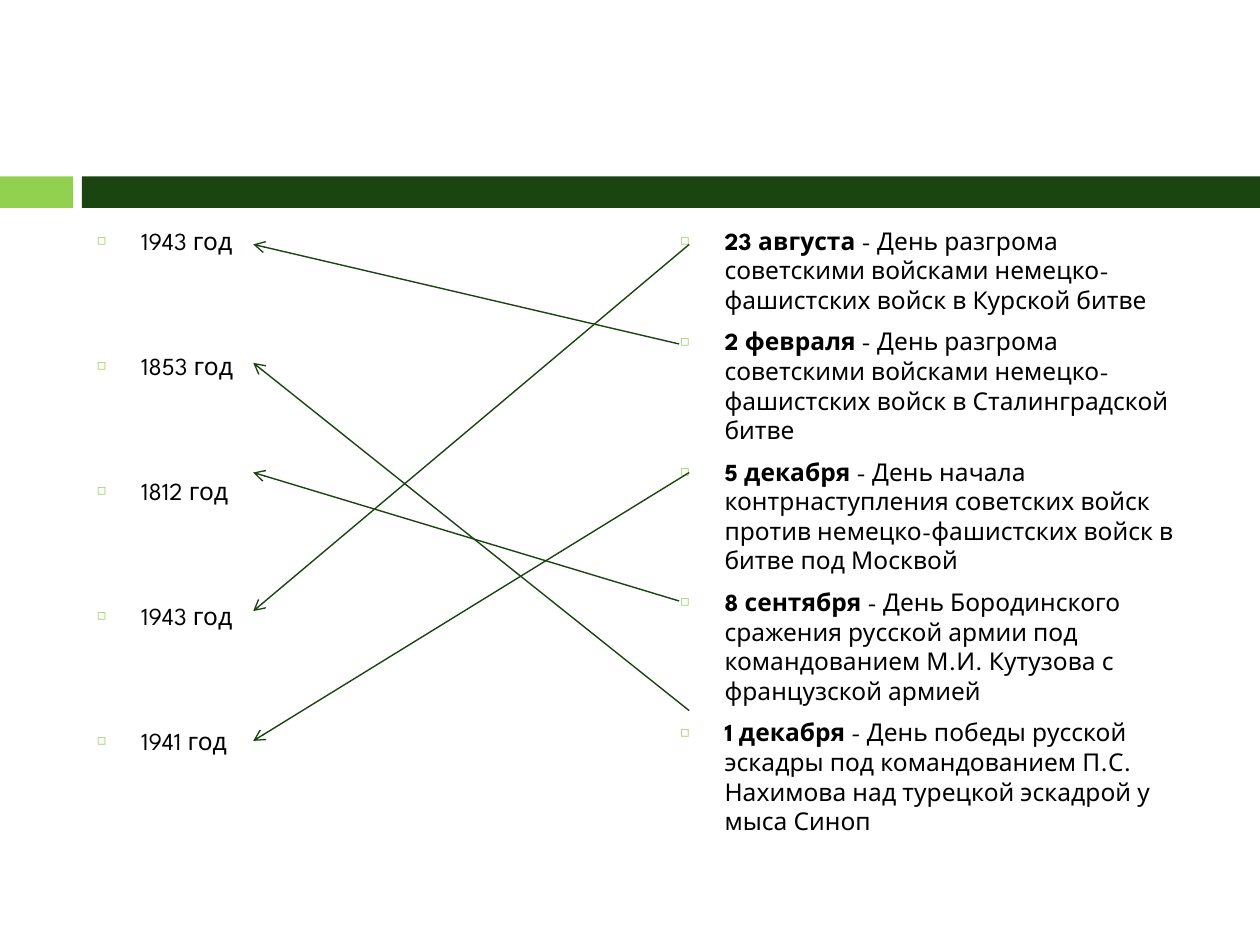
from dataclasses import dataclass

from lxml import etree
from pptx import Presentation
from pptx.dml.color import RGBColor
from pptx.enum.shapes import MSO_CONNECTOR, MSO_SHAPE
from pptx.enum.text import MSO_ANCHOR, MSO_AUTO_SIZE, PP_ALIGN
from pptx.oxml.ns import qn
from pptx.util import Inches, Pt

RECTANGLE = MSO_SHAPE.RECTANGLE
STRAIGHT = MSO_CONNECTOR.STRAIGHT
TOP, NO_FIT, LEFT = MSO_ANCHOR.TOP, MSO_AUTO_SIZE.NONE, PP_ALIGN.LEFT
TWO_CONTENT = 3


@dataclass(frozen=True)
class Theme:
    font: str = "League Spartan"
    text: str = "000000"
    lime: str = "92D050"
    green: str = "1A4410"
    text_size: float = 14
    line_spacing: float = 16.9
    arrow_width: float = 0.79
    bullet_percent: int = 60
    indent: float = 0.35


@dataclass(frozen=True)
class Band:
    left: float
    width: float
    color: str


@dataclass(frozen=True)
class Item:
    lead: str
    rest: str = ""


@dataclass(frozen=True)
class Column:
    left: float
    gap: float
    items: tuple[Item, ...]
    bold_lead: bool


@dataclass(frozen=True)
class Match:
    start: tuple[float, float]
    end_y: float


THEME = Theme()
BAND_TOP, BAND_HEIGHT = 1.4, 0.25
COLUMN_TOP, COLUMN_WIDTH, COLUMN_HEIGHT = 1.74, 4.25, 5
ARROW_END_X = 2.01

BANDS = (Band(0, 0.58, THEME.lime), Band(0.65, 9.35, THEME.green))

YEARS = Column(0.67, 54.5, tuple(
    Item(f"{year} год") for year in (1943, 1853, 1812, 1943, 1941)), False)

EVENTS = Column(5.3, 6.9, (
    Item("23 августа", " - День разгрома советскими войсками "
         "немецко-фашистских войск в Курской битве"),
    Item("2 февраля", " - День разгрома советскими войсками "
         "немецко-фашистских войск в Сталинградской битве"),
    Item("5 декабря", " - День начала контрнаступления советских войск "
         "против немецко-фашистских войск в битве под Москвой"),
    Item("8 сентября", " - День Бородинского сражения русской армии под "
         "командованием М.И. Кутузова с французской армией"),
    Item("1 декабря", " - День победы русской эскадры под командованием "
         "П.С. Нахимова над турецкой эскадрой у мыса Синоп"),
), True)

MATCHES = (
    Match((5.39, 2.73), 1.94),
    Match((5.47, 5.64), 2.88),
    Match((5.39, 4.77), 3.75),
    Match((5.47, 1.94), 4.85),
    Match((5.47, 3.75), 5.88),
)


def apply(target, values: dict) -> None:
    for name, value in values.items():
        setattr(target, name, value)


def add_band(page, band: Band) -> None:
    shape = page.shapes.add_shape(
        RECTANGLE, Inches(band.left), Inches(BAND_TOP),
        Inches(band.width), Inches(BAND_HEIGHT))
    shape.shadow.inherit = False
    shape.fill.solid()
    shape.fill.fore_color.rgb = RGBColor.from_string(band.color)
    shape.line.fill.background()


def add_bullet(para) -> None:
    properties = para._p.get_or_add_pPr()
    properties.set("marL", str(Inches(THEME.indent)))
    properties.set("indent", str(-Inches(THEME.indent)))
    color = etree.SubElement(properties, qn("a:buClr"))
    etree.SubElement(color, qn("a:srgbClr"), val=THEME.lime)
    etree.SubElement(properties, qn("a:buSzPct"),
                     val=str(THEME.bullet_percent * 1000))
    etree.SubElement(properties, qn("a:buChar"), char="◻")


def add_span(para, text: str, bold: bool) -> None:
    span = para.add_run()
    span.text = text
    apply(span.font, {"name": THEME.font, "size": Pt(THEME.text_size), "bold": bold})
    span.font.color.rgb = RGBColor.from_string(THEME.text)


def fill_column(box, column: Column) -> None:
    apply(box, {"left": Inches(column.left), "top": Inches(COLUMN_TOP),
                "width": Inches(COLUMN_WIDTH), "height": Inches(COLUMN_HEIGHT)})
    frame = box.text_frame
    apply(frame, {"word_wrap": True, "auto_size": NO_FIT, "vertical_anchor": TOP})
    for index, item in enumerate(column.items):
        para = frame.add_paragraph() if index else frame.paragraphs[0]
        add_bullet(para)
        apply(para, {"alignment": LEFT, "line_spacing": Pt(THEME.line_spacing),
                     "space_before": Pt(column.gap if index else 0),
                     "space_after": Pt(0)})
        add_span(para, item.lead, column.bold_lead)
        if item.rest:
            add_span(para, item.rest, False)


def add_arrow(page, match: Match) -> None:
    arrow = page.shapes.add_connector(
        STRAIGHT, *map(Inches, match.start),
        Inches(ARROW_END_X), Inches(match.end_y))
    arrow.line.width = Pt(THEME.arrow_width)
    arrow.line.color.rgb = RGBColor.from_string(THEME.green)
    etree.SubElement(arrow.line._get_or_add_ln(), qn("a:tailEnd"), type="arrow")
    etree.SubElement(arrow._element.spPr, qn("a:effectLst"))


def main() -> None:
    deck = Presentation()
    apply(deck, {"slide_width": Inches(10), "slide_height": Inches(7.5)})
    page = deck.slides.add_slide(deck.slide_layouts[TWO_CONTENT])
    title, years_box, events_box = list(page.placeholders)[:3]

    # The slide has no title
    title._element.getparent().remove(title._element)

    # Header band
    for band in BANDS:
        add_band(page, band)

    # Years and events
    fill_column(years_box, YEARS)
    fill_column(events_box, EVENTS)

    # Arrows from each event to its year
    for match in MATCHES:
        add_arrow(page, match)

    deck.save("out.pptx")


if __name__ == "__main__":
    main()
